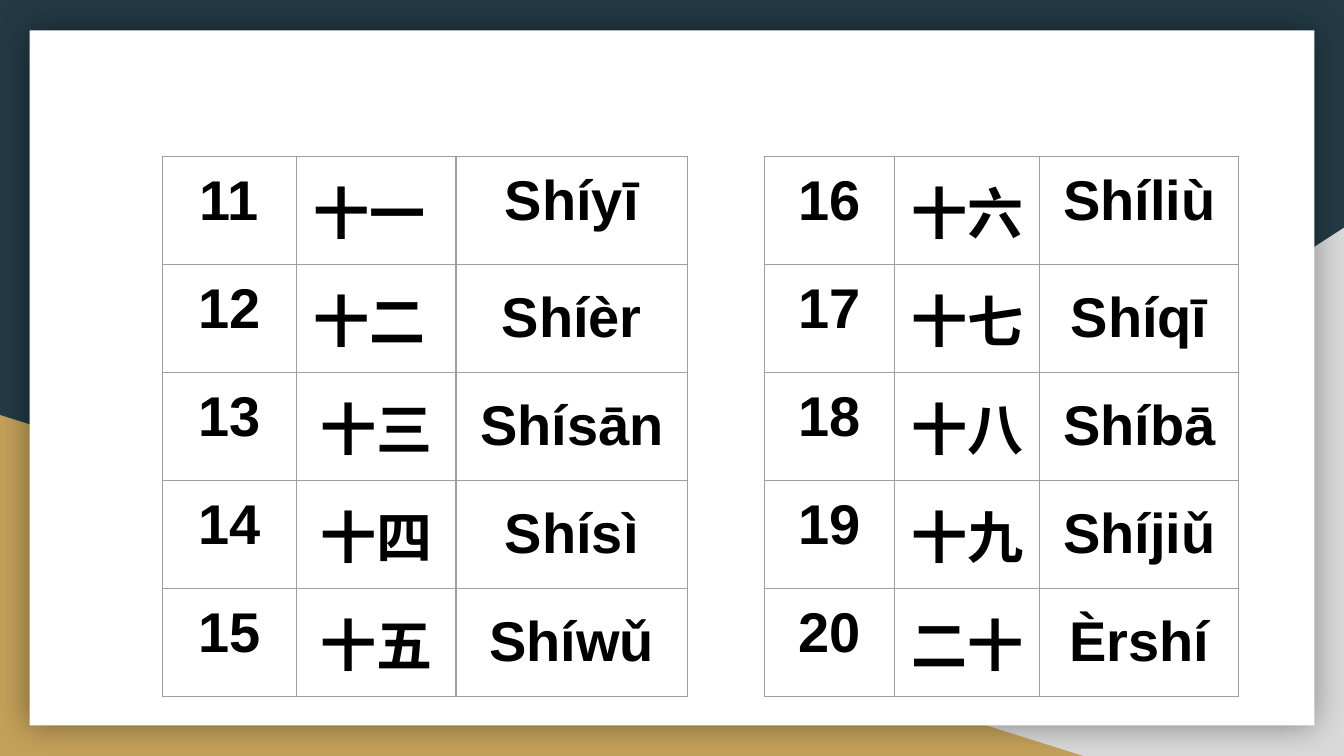
from lxml import etree
from pptx import Presentation
from pptx.dml.color import RGBColor
from pptx.enum.shapes import MSO_SHAPE
from pptx.enum.text import PP_ALIGN
from pptx.oxml.ns import qn
from pptx.util import Inches, Pt

NAVY = RGBColor(0x23, 0x3A, 0x44)
GREY = RGBColor(0xD9, 0xD9, 0xD9)
GOLD = RGBColor(0xC4, 0xA1, 0x5A)
WHITE = RGBColor(0xFF, 0xFF, 0xFF)
BLACK = RGBColor(0x00, 0x00, 0x00)
RULE = RGBColor(0x9E, 0x9E, 0x9E)
CENTER = PP_ALIGN.CENTER
RECT = MSO_SHAPE.RECTANGLE
TRIANGLE = MSO_SHAPE.RIGHT_TRIANGLE

WIDTH = Inches(10)
HEIGHT = WIDTH * 9 // 16
COLUMNS = 100  # square grid units across the slide
BLANK_LAYOUT = 6

TEENS = [
    ("11", "十一 ", "Shíyī"),
    ("12", "十二 ", "Shíèr"),
    ("13", "十三", "Shísān"),
    ("14", "十四", "Shísì"),
    ("15", "十五", "Shíwǔ"),
]
TO_TWENTY = [
    ("16", "十六 ", "Shíliù"),
    ("17", "十七 ", "Shíqī"),
    ("18", "十八", "Shíbā"),
    ("19", "十九", "Shíjiǔ"),
    ("20", "二十", "Èrshí"),
]


def add_element(parent, tag, **attributes):
    return etree.SubElement(parent, qn(tag), attributes)


class NumberSlide:
    font, size = "Arial", Pt(30)
    inset, border = Inches(0.1), Pt(0.75)
    first_row, other_rows = 6.2, 6.9

    def __init__(self, prs):
        self.unit = prs.slide_width / COLUMNS
        self.slide = prs.slides.add_slide(prs.slide_layouts[BLANK_LAYOUT])

    def grid(self, *units):
        return [round(u * self.unit) for u in units]

    def background(self, color):
        fill = self.slide.background.fill
        fill.solid()
        fill.fore_color.rgb = color

    def shape(self, kind, box, color, flip=False):
        sp = self.slide.shapes.add_shape(kind, *self.grid(*box))
        sp.fill.solid()
        sp.fill.fore_color.rgb = color
        sp.line.fill.background()
        sp.shadow.inherit = False
        if flip:
            sp._element.spPr.find(qn("a:xfrm")).set("flipH", "1")
        return sp

    def glow_shadow(self, sp, blur, opacity):
        effects = sp._element.spPr.find(qn("a:effectLst"))
        shadow = add_element(effects, "a:outerShdw", blurRad=str(blur),
                             dist="0", dir="0", algn="ctr", rotWithShape="0")
        color = add_element(shadow, "a:srgbClr", val=str(BLACK))
        add_element(color, "a:alpha", val=str(opacity * 1000))

    def table(self, left, top, widths, rows):
        heights = [self.first_row] + [self.other_rows] * (len(rows) - 1)
        box = self.grid(left, top, sum(widths), sum(heights))
        table = self.slide.shapes.add_table(len(rows), len(widths), *box).table
        table.first_row = table.horz_banding = False
        for column, width in zip(table.columns, self.grid(*widths)):
            column.width = width
        for row, height in zip(table.rows, self.grid(*heights)):
            row.height = height
        for r, texts in enumerate(rows):
            for c, text in enumerate(texts):
                # Pinyin below the first row is set slightly looser
                loose = c == 2 and r > 0
                self.cell(table.cell(r, c), text, 1.15 if loose else 1.0)

    def cell(self, cell, text, spacing):
        cell.margin_left = cell.margin_right = self.inset
        cell.margin_top = cell.margin_bottom = self.inset
        self.borders(cell)
        cell.fill.background()
        p = cell.text_frame.paragraphs[0]
        p.text = text
        p.alignment = CENTER
        p.line_spacing = spacing
        font = p.runs[0].font
        font.name, font.size, font.bold = self.font, self.size, True
        font.color.rgb = BLACK

    def borders(self, cell):
        properties = cell._tc.get_or_add_tcPr()
        for side in ("a:lnL", "a:lnR", "a:lnT", "a:lnB"):
            line = add_element(properties, side, w=str(self.border))
            fill = add_element(line, "a:solidFill")
            add_element(fill, "a:srgbClr", val=str(RULE))


def main():
    prs = Presentation()
    prs.slide_width, prs.slide_height = WIDTH, HEIGHT
    s = NumberSlide(prs)

    # Coloured corners behind a white card
    s.background(NAVY)
    s.shape(TRIANGLE, (39.2, 16.95, 60.8, 39.3), GREY, flip=True)
    s.shape(TRIANGLE, (0, 30.88, 80.6, 25.37), GOLD)
    card = s.shape(RECT, (2.2, 2.25, 95.6, 51.72), WHITE)
    s.glow_shadow(card, Pt(18), 40)

    # Numbers with characters and pinyin
    s.table(12.08, 11.63, (9.97, 11.88, 17.25), TEENS)
    s.table(56.9, 11.63, (9.67, 10.8, 14.8), TO_TWENTY)

    prs.save("out.pptx")


if __name__ == "__main__":
    main()
